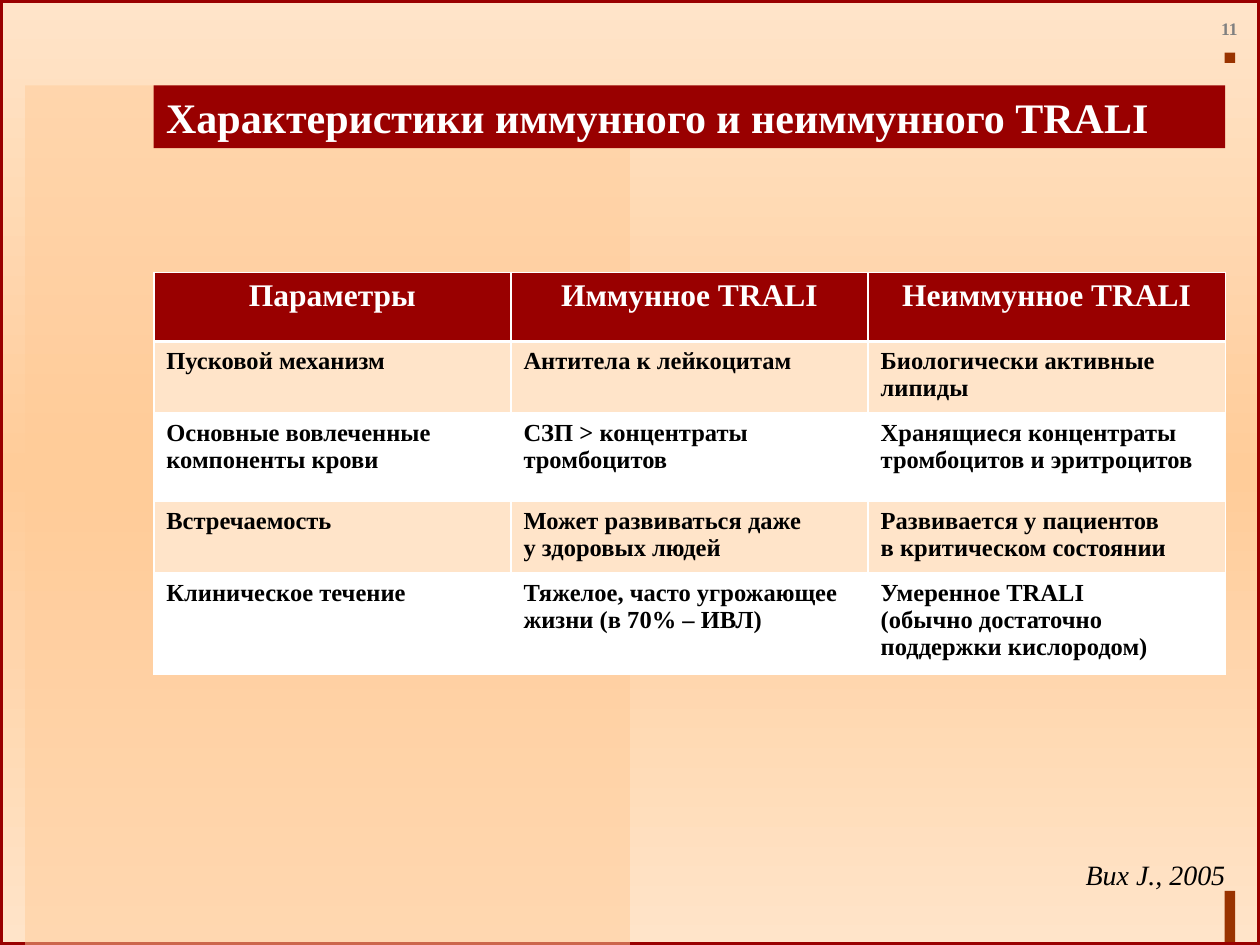
from copy import deepcopy

from lxml.etree import SubElement
from pptx import Presentation
from pptx.dml.color import RGBColor
from pptx.enum.shapes import MSO_SHAPE as Shape
from pptx.enum.text import MSO_ANCHOR as Anchor, PP_ALIGN as Align
from pptx.oxml.ns import qn
from pptx.util import Cm, Pt

COLORS = {
    "dark_red": "990000",
    "rust": "993300",
    "peach": "FFCC99",
    "cream": "FFE4C9",
    "white": "FFFFFF",
    "black": "000000",
    "gray": "808080",
}
FONT = "Times New Roman"

BACKGROUND_STOPS = [(0, "cream"), (0.5, "peach"), (1, "cream")]
DECORATIONS = [
    {"box": (24.69, 17.96, 0.21, 1.07), "fill": "rust"},
    {"box": (24.69, 1.06, 0.21, 0.21), "fill": "rust"},
    {"box": (0, 0, 25.4, 19.05), "line": "dark_red"},
    {"box": (0.51, 1.72, 12.19, 17.33), "fill": "peach", "alpha": 50},
]

TITLE = "Характеристики иммунного и неиммунного TRALI"
TITLE_BOX = (3.1, 1.72, 21.6, 1.27)
PAGE_NUMBER = "11"
PAGE_NUMBER_BOX = (24.43, 0.33, 0.71, 0.51)
SOURCE = "Bux J., 2005"
SOURCE_BOX = (21.3, 17.27, 3.4, 0.71)

TABLE_ROWS = [
    ("Параметры", "Иммунное TRALI", "Неиммунное TRALI"),
    ("Пусковой механизм", "Антитела к лейкоцитам", "Биологически активные липиды"),
    ("Основные вовлеченные компоненты крови", "СЗП > концентраты тромбоцитов",
     "Хранящиеся концентраты тромбоцитов и эритроцитов"),
    ("Встречаемость", "Может развиваться даже \vу здоровых людей",
     "Развивается у пациентов \vв критическом состоянии"),
    ("Клиническое течение", "Тяжелое, часто угрожающее жизни (в 70% – ИВЛ)",
     "Умеренное TRALI \v(обычно достаточно поддержки кислородом)"),
]
ROW_HEIGHTS = [1.4, 1.43, 1.78, 1.42, 2.03]
TABLE_LEFT, TABLE_TOP, TABLE_WIDTH = 3.1, 5.49, 21.6

STYLES = {
    "title": {"size": Pt(24), "bold": True, "color": "white"},
    "header": {"size": Pt(18), "bold": True, "color": "white"},
    "body": {"size": Pt(14), "bold": True, "color": "black"},
    "number": {"size": Pt(10), "bold": True, "color": "gray"},
    "source": {"size": Pt(16), "italic": True, "color": "black"},
}
LABEL_FORMAT = {
    "word_wrap": True,
    "vertical_anchor": Anchor.MIDDLE,
    "margin_left": 0,
    "margin_top": 0,
    "margin_right": 0,
    "margin_bottom": 0,
}


def rgb(name):
    return RGBColor.from_string(COLORS[name])


def write_text(frame, text, style, align=Align.LEFT):
    paragraph = frame.paragraphs[0]
    paragraph.text = text
    paragraph.alignment = align
    for run in paragraph.runs:
        run.font.name = FONT
        for attribute, value in STYLES[style].items():
            if attribute == "color":
                run.font.color.rgb = rgb(value)
            else:
                setattr(run.font, attribute, value)


def paint_background(slide):
    fill = slide.background.fill
    fill.gradient()
    fill.gradient_angle = 90
    stop_list = next(slide.element.iter(qn("a:gsLst")))
    stop_list.append(deepcopy(stop_list[0]))
    for stop, (position, color) in zip(fill.gradient_stops, BACKGROUND_STOPS):
        stop.position = position
        stop.color.rgb = rgb(color)


def add_rectangle(slide, box, fill=None, line=None, alpha=None):
    shape = slide.shapes.add_shape(Shape.RECTANGLE, *map(Cm, box))
    shape.shadow.inherit = False
    if fill:
        shape.fill.solid()
        shape.fill.fore_color.rgb = rgb(fill)
    else:
        shape.fill.background()
    if line:
        shape.line.color.rgb = rgb(line)
        shape.line.width = Pt(3)
    else:
        shape.line.fill.background()
    if alpha:
        color = next(shape.element.spPr.iter(qn("a:srgbClr")))
        SubElement(color, qn("a:alpha"), val=str(alpha * 1000))
    return shape


def add_label(slide, box, text, style, align):
    frame = slide.shapes.add_textbox(*map(Cm, box)).text_frame
    for attribute, value in LABEL_FORMAT.items():
        setattr(frame, attribute, value)
    write_text(frame, text, style, align)


def set_borders(cell, row_index):
    properties = cell._tc.get_or_add_tcPr()
    widths = {"lnL": 1, "lnR": 1,
              "lnT": 2 if row_index == 1 else 1,
              "lnB": 2 if row_index == 0 else 1}
    for position, (side, width) in enumerate(widths.items()):
        line = SubElement(properties, qn(f"a:{side}"), w=str(Pt(width)))
        fill = SubElement(line, qn("a:solidFill"))
        SubElement(fill, qn("a:srgbClr"), val=COLORS["white"])
        properties.insert(position, line)


def add_comparison_table(slide):
    column_count = len(TABLE_ROWS[0])
    table = slide.shapes.add_table(
        len(TABLE_ROWS), column_count, Cm(TABLE_LEFT), Cm(TABLE_TOP),
        Cm(TABLE_WIDTH), Cm(sum(ROW_HEIGHTS))).table
    for column in table.columns:
        column.width = Cm(TABLE_WIDTH / column_count)
    for row_index, (texts, height) in enumerate(zip(TABLE_ROWS, ROW_HEIGHTS)):
        row = table.rows[row_index]
        row.height = Cm(height)
        is_header = row_index == 0
        band = "dark_red" if is_header else "cream" if row_index % 2 else "white"
        for cell, text in zip(row.cells, texts):
            cell.fill.solid()
            cell.fill.fore_color.rgb = rgb(band)
            set_borders(cell, row_index)
            write_text(cell.text_frame, text, "header" if is_header else "body",
                       Align.CENTER if is_header else Align.LEFT)


def main():
    presentation = Presentation()
    presentation.slide_width, presentation.slide_height = Cm(25.4), Cm(19.05)
    slide = presentation.slides.add_slide(presentation.slide_layouts[6])

    paint_background(slide)
    for decoration in DECORATIONS:
        add_rectangle(slide, **decoration)
    add_label(slide, PAGE_NUMBER_BOX, PAGE_NUMBER, "number", Align.CENTER)

    title = add_rectangle(slide, TITLE_BOX, fill="dark_red")
    title.text_frame.vertical_anchor = Anchor.TOP
    write_text(title.text_frame, TITLE, "title")

    add_label(slide, SOURCE_BOX, SOURCE, "source", Align.RIGHT)
    add_comparison_table(slide)
    presentation.save("out.pptx")


if __name__ == "__main__":
    main()
